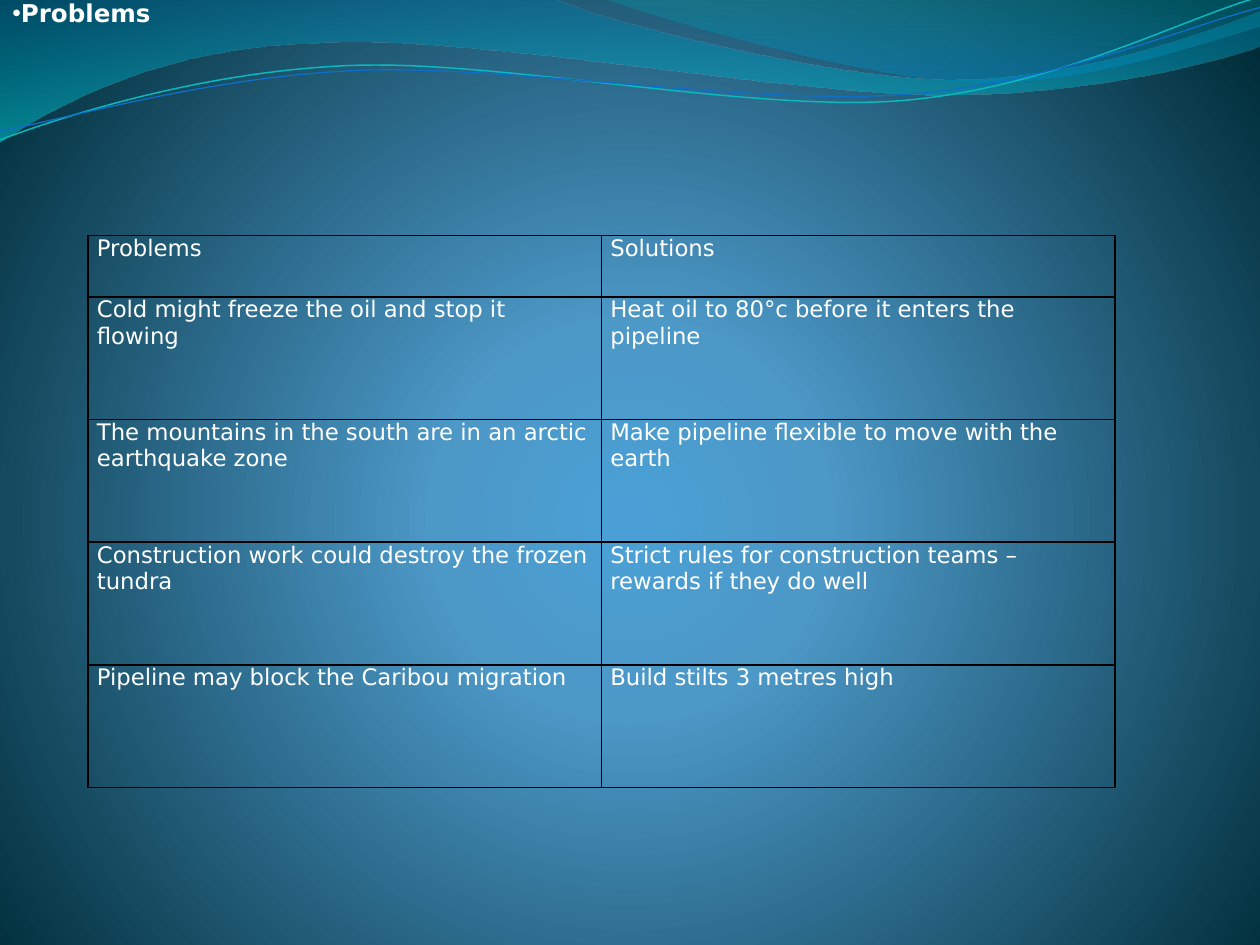
from dataclasses import dataclass
from math import cos, radians, sin
from typing import Any

from lxml import etree
from pptx import Presentation
from pptx import util as u
from pptx.dml.color import RGBColor
from pptx.enum import text
from pptx.oxml.ns import qn

Point = tuple[float, float]

FONT = "DejaVu Sans"
COLOURS = {
    "white": "FFFFFF", "border": "000000",
    "glow": "4AA0D6", "mid": "4C98C7", "edge": "002C38",
    "wave_top": "0074A1", "wave_bottom": "00C6CF",
    "crest_top": "00A1A9", "crest_bottom": "008BBF",
    "teal": "0AB8BF", "blue": "0F6FC6",
}
TILT = -2.7
TABLE_HEIGHT = 4.38
ROWS = [
    ("Problems", "Solutions"),
    ("Cold might freeze the oil and stop it flowing",
     "Heat oil to 80°c before it enters the pipeline"),
    ("The mountains in the south are in an arctic earthquake zone",
     "Make pipeline flexible to move with the earth"),
    ("Construction work could destroy the frozen tundra",
     "Strict rules for construction teams – rewards if they do well"),
    ("Pipeline may block the Caribou migration", "Build stilts 3 metres high"),
]


@dataclass
class Stop:
    position: int
    colour: str
    opacity: int = 100


@dataclass
class Wave:
    """Segments hold one point for a line, three for a cubic curve."""
    start: Point
    segments: list[tuple[Point, ...]]
    stops: tuple[Stop, ...] = ()
    line: str = ""
    width: float = 0
    pivot: Point = (0, 0)
    tilt: float = 0


WAVES = [
    Wave((0, 0), [
        ((4.4, -0.01),),
        ((4.76, 0.17), (6.64, 0.63), (7.58, 0.63)),
        ((8.53, 0.63), (9.58, 0.26), (10, 0.09)),
        ((10.01, 0.36),),
        ((9.83, 0.44), (8.7, 0.76), (7.46, 0.75)),
        ((6.22, 0.75), (3.82, 0.28), (2.57, 0.34)),
        ((1.29, 0.36), (0.46, 0.83), (-0.01, 1.13)),
    ], stops=(Stop(0, "wave_top", 45), Stop(100, "wave_bottom", 55))),
    Wave((4.79, -0.01), [
        ((5.09, 0.11), (6.82, 0.62), (7.69, 0.65)),
        ((8.56, 0.69), (9.61, 0.32), (10, 0.21)),
        ((10, 0),),
    ], stops=(Stop(0, "crest_top", 30), Stop(80, "crest_bottom", 45))),
    Wave((0, 1.11), [
        ((0.48, 0.93), (1.58, 0.57), (2.77, 0.52)),
        ((3.95, 0.47), (5.93, 0.89), (7.13, 0.8)),
        ((8.33, 0.71), (9.38, 0.15), (9.98, -0.02)),
    ], line="teal", width=0.85, pivot=(4.99, 0.58), tilt=TILT),
    Wave((0, 1.04), [
        ((0.47, 0.96), (1.64, 0.61), (2.83, 0.56)),
        ((4.03, 0.51), (5.97, 0.84), (7.17, 0.75)),
        ((8.36, 0.67), (9.41, 0.21), (10, 0.06)),
    ], line="blue", width=0.75, pivot=(5, 0.59), tilt=TILT),
]


def rgb(name: str) -> RGBColor:
    return RGBColor.from_string(COLOURS[name])


def apply_format(target: Any, values: dict[str, Any]) -> None:
    for name, value in values.items():
        setattr(target, name, value)


def add_child(parent: Any, tag: str, **attributes: Any) -> Any:
    return etree.SubElement(parent, qn(tag), {k: str(v) for k, v in attributes.items()})


def add_colour(parent: Any, name: str) -> Any:
    return add_child(parent, "a:srgbClr", val=COLOURS[name])


def set_gradient(properties: Any, stops: tuple[Stop, ...], radial: bool = False) -> None:
    """Replace the empty fill of a properties element with a gradient."""
    gradient = etree.Element(qn("a:gradFill"), rotWithShape="1")
    stop_list = add_child(gradient, "a:gsLst")
    for stop in stops:
        colour = add_colour(add_child(stop_list, "a:gs", pos=stop.position * 1000), stop.colour)
        if stop.opacity < 100:
            add_child(colour, "a:alpha", val=stop.opacity * 1000)
    if radial:
        shade = add_child(gradient, "a:path", path="circle")
        add_child(shade, "a:fillToRect", l=10000, t=110000, r=10000, b=100000)
    else:
        add_child(gradient, "a:lin", ang=5400000, scaled=0)
    properties.replace(properties.find(qn("a:noFill")), gradient)


def level(point: Point, wave: Wave) -> tuple[int, int]:
    """Undo the tilt, which the shape's own rotation puts back."""
    angle = radians(-wave.tilt)
    x, y = point[0] - wave.pivot[0], point[1] - wave.pivot[1]
    return (u.Inches(wave.pivot[0] + x * cos(angle) - y * sin(angle)),
            u.Inches(wave.pivot[1] + x * sin(angle) + y * cos(angle)))


def bend(shape: Any, wave: Wave) -> None:
    """Join each run of three line points into one cubic curve."""
    lines = iter(list(shape.element.iter(qn("a:lnTo"))))
    for segment in wave.segments:
        group = [next(lines) for _ in segment]
        if len(group) == 3:
            curve = etree.Element(qn("a:cubicBezTo"))
            group[0].addprevious(curve)
            for line in group:
                curve.append(line[0])
                line.getparent().remove(line)


def add_wave(slide: Any, wave: Wave) -> None:
    builder = slide.shapes.build_freeform(*level(wave.start, wave))
    points = [level(point, wave) for segment in wave.segments for point in segment]
    builder.add_line_segments(points, close=bool(wave.stops))
    shape = builder.convert_to_shape()
    bend(shape, wave)
    shape.rotation = wave.tilt
    shape.shadow.inherit = False
    shape.fill.background()
    if wave.stops:
        set_gradient(shape.element.spPr, wave.stops)
        shape.line.fill.background()
    else:
        shape.line.color.rgb = rgb(wave.line)
        shape.line.width = u.Pt(wave.width)


def write(paragraph: Any, words: str, size: float, bold: bool = False) -> None:
    run = paragraph.add_run()
    run.text = words
    apply_format(run.font, {"name": FONT, "size": u.Pt(size), "bold": bold})
    run.font.color.rgb = rgb("white")


def add_borders(cell: Any) -> None:
    properties = cell._tc.get_or_add_tcPr()
    for index, side in enumerate(("a:lnL", "a:lnR", "a:lnT", "a:lnB")):
        border = add_child(properties, side, w=u.Pt(1))
        add_colour(add_child(border, "a:solidFill"), "border")
        properties.insert(index, border)


def add_problem_table(slide: Any) -> None:
    frame = slide.shapes.add_table(len(ROWS), 2, u.Inches(0.7), u.Inches(1.87),
                                   u.Inches(8.15), u.Inches(TABLE_HEIGHT))
    table = frame.table
    apply_format(table, {"first_row": False, "horz_banding": False})
    row_height = TABLE_HEIGHT / (len(ROWS) - 0.5)  # the heading row is half as high
    for row_index, words in enumerate(ROWS):
        table.rows[row_index].height = u.Inches(row_height if row_index else row_height / 2)
        for column_index, phrase in enumerate(words):
            cell = table.cell(row_index, column_index)
            apply_format(cell, {"margin_left": u.Inches(0.07), "margin_right": u.Inches(0.07),
                                "margin_top": 0, "margin_bottom": 0})
            cell.fill.background()
            add_borders(cell)
            write(cell.text_frame.paragraphs[0], phrase, 13)


def add_title(slide: Any) -> None:
    box = slide.shapes.add_textbox(0, 0, u.Inches(10), u.Inches(0.5))
    apply_format(box.text_frame, {"word_wrap": True, "margin_top": 0,
                                  "margin_bottom": u.Inches(0.29),
                                  "vertical_anchor": text.MSO_ANCHOR.MIDDLE})
    paragraph = box.text_frame.paragraphs[0]
    properties = paragraph._p.get_or_add_pPr()
    add_child(properties, "a:buFont", typeface="Arial")
    add_child(properties, "a:buChar", char="•")
    write(paragraph, "Problems", 14, bold=True)


def main() -> None:
    presentation = Presentation()
    apply_format(presentation, {"slide_width": u.Inches(10), "slide_height": u.Inches(7.5)})
    slide = presentation.slides.add_slide(presentation.slide_layouts[6])
    # Radial backdrop
    slide.background.fill.background()
    set_gradient(slide.element.find(".//" + qn("p:bgPr")),
                 (Stop(0, "glow"), Stop(25, "mid"), Stop(100, "edge")), radial=True)
    # Waves along the top
    for wave in WAVES:
        add_wave(slide, wave)
    # Content
    add_problem_table(slide)
    add_title(slide)
    presentation.save("out.pptx")


if __name__ == "__main__":
    main()
